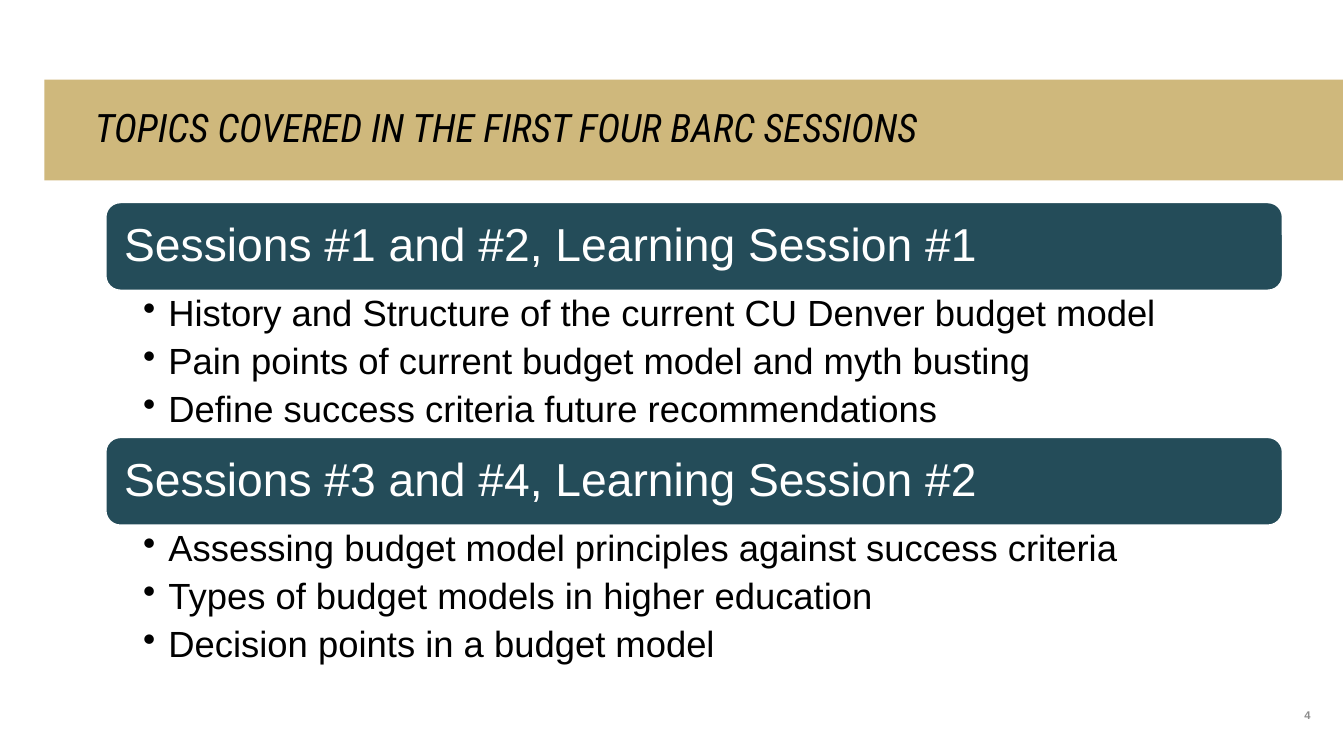
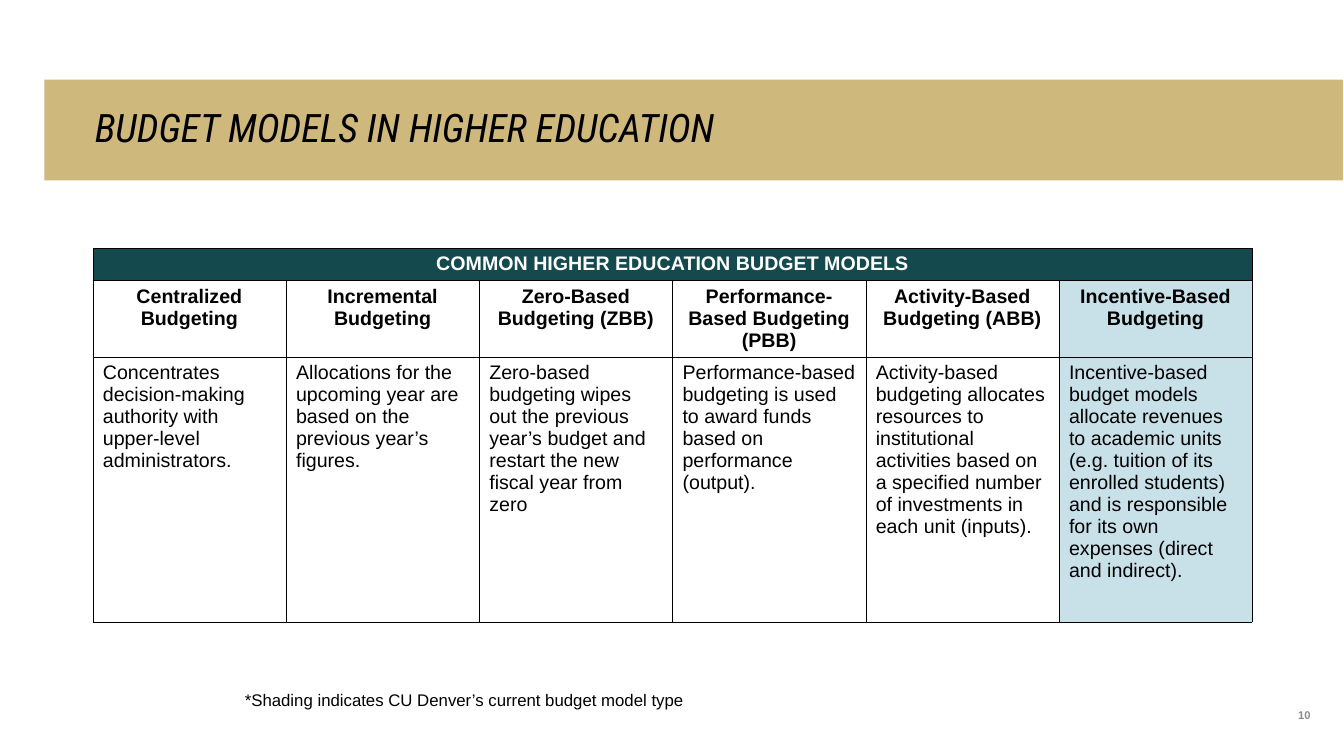
import pptx
import pptx.util
import pptx.dml.color
import pptx.enum.shapes
import pptx.enum.text
import pptx.oxml
import pptx.oxml.ns

Inches, Pt = pptx.util.Inches, pptx.util.Pt
Color = pptx.dml.color.RGBColor
Align = pptx.enum.text.PP_ALIGN
Anchor = pptx.enum.text.MSO_ANCHOR

GOLD = Color(0xCF, 0xB8, 0x7C)
TEAL = Color(0x24, 0x4C, 0x59)
DARK = Color(0x14, 0x49, 0x4E)
PALE = Color(0xC8, 0xE1, 0xE9)
GRAY = Color(0x8C, 0x8C, 0x8C)
BLACK = Color(0, 0, 0)
WHITE = Color(0xFF, 0xFF, 0xFF)

TOPICS = [
    ("Sessions #1 and #2, Learning Session #1", [
        "History and Structure of the current CU Denver budget model",
        "Pain points of current budget model and myth busting",
        "Define success criteria future recommendations",
    ]),
    ("Sessions #3 and #4, Learning Session #2", [
        "Assessing budget model principles against success criteria",
        "Types of budget models in higher education",
        "Decision points in a budget model",
    ]),
]

HEADING = "COMMON HIGHER EDUCATION BUDGET MODELS"
MODELS = [
    ("Centralized Budgeting",
     "Concentrates decision-making authority with upper-level administrators."),
    ("Incremental Budgeting",
     "Allocations for the upcoming year are based on the previous year’s figures."),
    ("Zero-Based Budgeting (ZBB)",
     "Zero-based budgeting wipes out the previous year’s budget and restart "
     "the new fiscal year from zero"),
    ("Performance-Based Budgeting (PBB)",
     "Performance-based budgeting is used to award funds based on performance (output)."),
    ("Activity-Based Budgeting (ABB)",
     "Activity-based budgeting allocates resources to institutional activities "
     "based on a specified number of investments in each unit (inputs)."),
    ("Incentive-Based Budgeting",
     "Incentive-based budget models allocate revenues to academic units (e.g. "
     "tuition of its enrolled students) and is responsible for its own expenses "
     "(direct and indirect)."),
]
CURRENT = "Incentive-Based Budgeting"
NOTE = "*Shading indicates CU Denver’s current budget model type"


def write(para, text, size, color=BLACK, font="Arial", bold=False,
          italic=False, align=Align.LEFT):
    para.alignment = align
    run = para.add_run()
    run.text = text
    face = run.font
    face.name, face.size = font, Pt(size)
    face.bold, face.italic = bold, italic
    face.color.rgb = color


def frame(shape, insets, anchor=Anchor.TOP):
    """Set wrapping, insets (left, top, right, bottom) and anchor."""
    body = shape.text_frame
    body.word_wrap = True
    body.auto_size = pptx.enum.text.MSO_AUTO_SIZE.NONE
    body.vertical_anchor = anchor
    (body.margin_left, body.margin_top,
     body.margin_right, body.margin_bottom) = map(Inches, insets)
    return body


def box(slide, place, insets, anchor=Anchor.TOP):
    return frame(slide.shapes.add_textbox(*map(Inches, place)), insets, anchor)


def start(deck, title, number):
    """Add a slide with the gold title band and its page number."""
    slide = deck.slides.add_slide(deck.slide_layouts[5])
    band = slide.shapes.title
    band.left, band.top, band.width, band.height = map(
        Inches, (0.44, 0.79, 12.88, 1))
    band.fill.solid()
    band.fill.fore_color.rgb = GOLD
    para = frame(band, (0.5, 0.05, 1, 0.05), Anchor.MIDDLE).paragraphs[0]
    para.line_spacing = 0.9
    write(para, title, 28, font="Roboto Condensed", italic=True)
    page = box(slide, (12.15, 6.66, 0.85, 0.5), (0, 0, 0, 0), Anchor.BOTTOM)
    write(page.paragraphs[0], str(number), 8, GRAY, bold=True, align=Align.RIGHT)
    return slide


def bullet(para):
    props = para._p.get_or_add_pPr()
    props.set("marL", str(Inches(0.25)))
    props.set("indent", str(Inches(-0.25)))
    mark = pptx.oxml.ns.qn("a:buChar")
    props.append(props.makeelement(mark, {"char": "•"}))


def topics(slide):
    left, top, width, bar_h, list_h = 1.05, 2.01, 11.67, 0.87, 1.46
    for i, (head, items) in enumerate(TOPICS):
        y = top + i * (bar_h + list_h)
        bar = slide.shapes.add_shape(
            pptx.enum.shapes.MSO_SHAPE.ROUNDED_RECTANGLE,
            *map(Inches, (left, y, width, bar_h)))
        bar.shadow.inherit = False
        bar.fill.solid()
        bar.fill.fore_color.rgb = TEAL
        bar.line.color.rgb = WHITE
        bar.line.width = Pt(1)
        para = frame(bar, (0.14, 0.14, 0.14, 0.14), Anchor.MIDDLE).paragraphs[0]
        para.line_spacing = 0.9
        write(para, head, 33, WHITE)

        body = box(slide, (left, y + bar_h, width, list_h),
                   (0.37, 0.05, 0.26, 0.05))
        for j, item in enumerate(items):
            para = body.add_paragraph() if j else body.paragraphs[0]
            bullet(para)
            para.line_spacing = 0.9
            para.space_after = Pt(6.3)
            write(para, item, 26)


def border(cell):
    props = cell._tc.get_or_add_tcPr()
    for side in "LRTB":
        props.append(pptx.oxml.parse_xml(
            f'<a:ln{side} {pptx.oxml.ns.nsdecls("a")} w="{Pt(0.25)}">'
            f'<a:solidFill><a:srgbClr val="{BLACK}"/></a:solidFill></a:ln{side}>'))


def models(slide):
    heights = [0.32, 0.76, 2.63]
    grid = slide.shapes.add_table(
        len(heights), len(MODELS),
        *map(Inches, (0.92, 2.46, 11.5, sum(heights)))).table
    grid.first_row = grid.horz_banding = False
    for row, high in zip(grid.rows, heights):
        row.height = Inches(high)
    for cell in grid.iter_cells():
        border(cell)

    def fill(cell, text, shade, **style):
        if shade is None:
            cell.fill.background()
        else:
            cell.fill.solid()
            cell.fill.fore_color.rgb = shade
        write(cell.text_frame.paragraphs[0], text, 14, **style)

    top = grid.cell(0, 0)
    top.merge(grid.cell(0, len(MODELS) - 1))
    fill(top, HEADING, DARK, color=WHITE, bold=True, align=Align.CENTER)
    for col, (name, text) in enumerate(MODELS):
        shade = PALE if name == CURRENT else None
        fill(grid.cell(1, col), name, shade, bold=True, align=Align.CENTER)
        fill(grid.cell(2, col), text, shade)
    note = box(slide, (2.33, 6.79, 10, 0.3), (0.1, 0.05, 0.1, 0.05))
    write(note.paragraphs[0], NOTE, 12)


def main():
    deck = pptx.Presentation()
    deck.slide_width, deck.slide_height = Inches(13.33), Inches(7.5)
    topics(start(deck, "TOPICS COVERED IN THE FIRST FOUR BARC SESSIONS", 4))
    models(start(deck, "BUDGET MODELS IN HIGHER EDUCATION", 10))
    deck.save("out.pptx")


if __name__ == "__main__":
    main()
